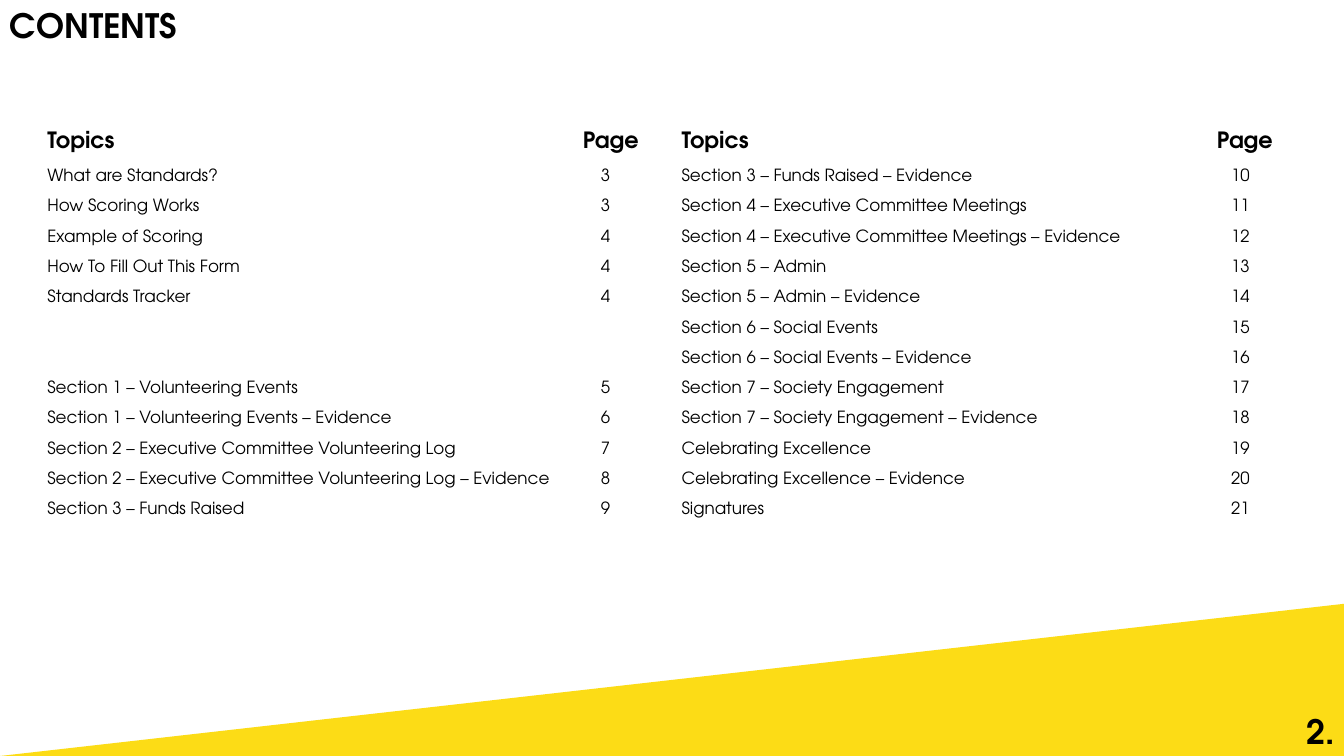
from lxml.etree import SubElement
from pptx import Presentation
from pptx.dml.color import RGBColor
from pptx.enum.shapes import MSO_SHAPE as Shape
from pptx.enum.text import MSO_AUTO_SIZE as AutoSize, PP_ALIGN as Align
from pptx.oxml.ns import qn
from pptx.util import Inches, Pt

YELLOW = RGBColor(0xFC, 0xDC, 0x16)
BLACK = RGBColor(0, 0, 0)
FONT = "TeX Gyre Adventor"

LEFT_TOPICS = [
    ("Topics", "Page"),
    ("What are Standards?", "3"),
    ("How Scoring Works", "3"),
    ("Example of Scoring", "4"),
    ("How To Fill Out This Form", "4"),
    ("Standards Tracker", "4"),
    ("", ""),
    ("", ""),
    ("Section 1 – Volunteering Events", "5"),
    ("Section 1 – Volunteering Events – Evidence", "6"),
    ("Section 2 – Executive Committee Volunteering Log", "7"),
    ("Section 2 – Executive Committee Volunteering Log – Evidence", "8"),
    ("Section 3 – Funds Raised", "9"),
]
RIGHT_TOPICS = [
    ("Topics", "Page"),
    ("Section 3 – Funds Raised – Evidence", "10"),
    ("Section 4 – Executive Committee Meetings", "11"),
    ("Section 4 – Executive Committee Meetings – Evidence", "12"),
    ("Section 5 – Admin", "13"),
    ("Section 5 – Admin – Evidence", "14"),
    ("Section 6 – Social Events", "15"),
    ("Section 6 – Social Events – Evidence", "16"),
    ("Section 7 – Society Engagement", "17"),
    ("Section 7 – Society Engagement – Evidence", "18"),
    ("Celebrating Excellence", "19"),
    ("Celebrating Excellence – Evidence", "20"),
    ("Signatures", "21"),
]
COLUMN_WIDTHS = [5.31, 0.98, 5.31, 0.98]
NUMBER_MARGINS = {1: 0.28, 3: 0.24}
HEADER_HEIGHT, ROW_HEIGHT = 0.37, 0.3


def write(paragraph, text, size, bold):
    """Put one formatted run in the paragraph; an empty one only keeps its size."""
    if not text:
        SubElement(paragraph._p, qn("a:endParaRPr"), sz=str(size * 100))
        return
    run = paragraph.add_run()
    run.text = text
    font_format = {"name": FONT, "size": Pt(size), "bold": bold}
    for attribute, value in font_format.items():
        setattr(run.font, attribute, value)
    run.font.color.rgb = BLACK


presentation = Presentation()
presentation.slide_width = Inches(13.33)
presentation.slide_height = Inches(7.5)
slide = presentation.slides.add_slide(presentation.slide_layouts[6])

# Yellow wedge rising to the right
wedge = slide.shapes.add_shape(
    Shape.RIGHT_TRIANGLE, Inches(0), Inches(5.99), Inches(13.33), Inches(1.51))
wedge.shadow.inherit = False
wedge.fill.solid()
wedge.fill.fore_color.rgb = YELLOW
wedge.line.fill.background()
wedge._element.spPr.xfrm.set("flipH", "1")

# Page number and title
for text, left, top, width, alignment in [
    ("2.", 12.66, 7, 0.68, Align.RIGHT),
    ("CONTENTS", 0, 0, 13.33, Align.LEFT),
]:
    box = slide.shapes.add_textbox(
        Inches(left), Inches(top), Inches(width), Inches(0.5))
    box.text_frame.word_wrap = True
    box.text_frame.auto_size = AutoSize.SHAPE_TO_FIT_TEXT
    paragraph = box.text_frame.paragraphs[0]
    paragraph.alignment = alignment
    write(paragraph, text, 24, True)

# Contents table: two topic and page lists side by side
rows = [left + right for left, right in zip(LEFT_TOPICS, RIGHT_TOPICS)]
table_height = HEADER_HEIGHT + ROW_HEIGHT * (len(rows) - 1)
table = slide.shapes.add_table(
    len(rows), len(COLUMN_WIDTHS), Inches(0.37), Inches(1.26),
    Inches(sum(COLUMN_WIDTHS)), Inches(table_height)).table
table.first_row = False
table.horz_banding = False
for column, width in zip(table.columns, COLUMN_WIDTHS):
    column.width = Inches(width)

for row_index, texts in enumerate(rows):
    is_header = row_index == 0
    table.rows[row_index].height = Inches(HEADER_HEIGHT if is_header else ROW_HEIGHT)
    for column_index, text in enumerate(texts):
        cell = table.cell(row_index, column_index)
        cell.fill.background()
        if not is_header and column_index in NUMBER_MARGINS:
            cell.margin_left = Inches(NUMBER_MARGINS[column_index])
        write(cell.text_frame.paragraphs[0], text, 16 if is_header else 12, is_header)

presentation.save("out.pptx")
